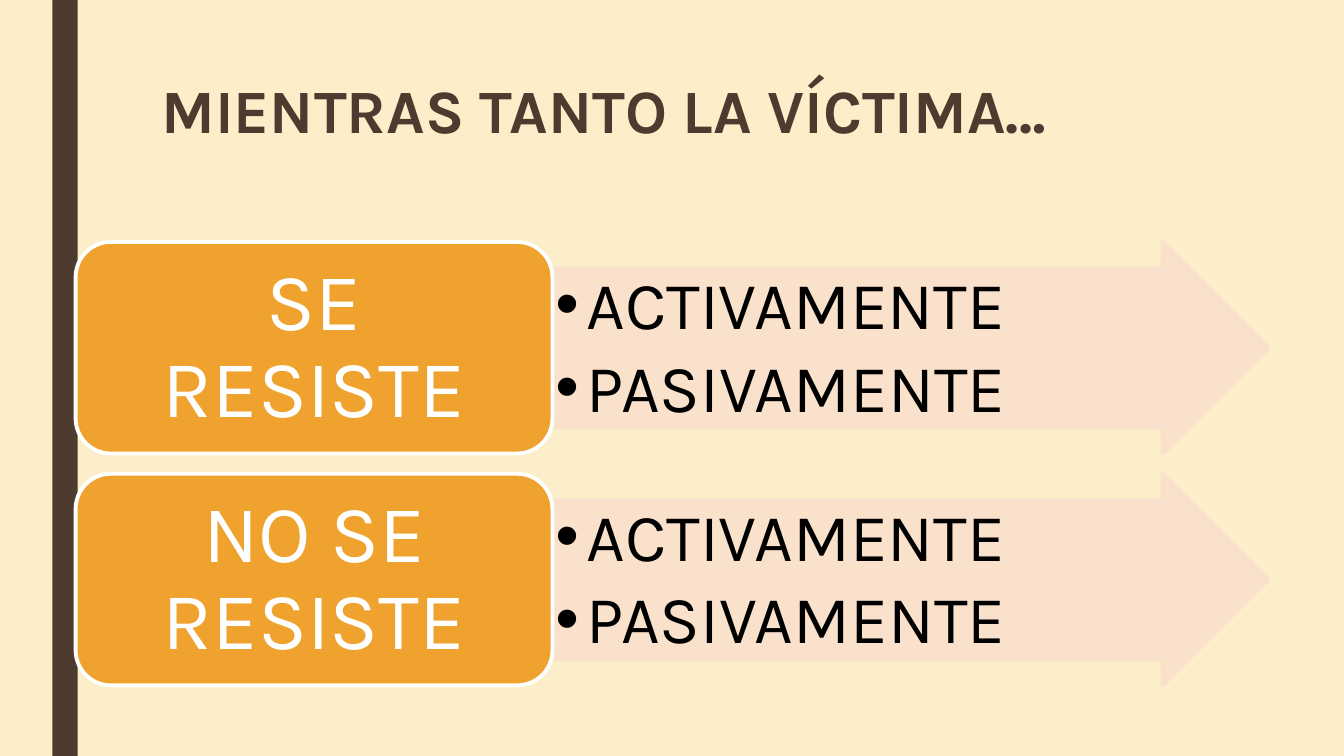
"""Builds the slide on how the victim resists or does not resist."""
from lxml import etree
from pptx import Presentation
from pptx import util as u
from pptx.dml.color import RGBColor
from pptx.enum import shapes, text
from pptx.oxml.ns import qn

TITLE = "MIENTRAS TANTO LA VÍCTIMA…"
ROWS = [
    ("SE RESISTE", ["ACTIVAMENTE", "PASIVAMENTE"]),
    ("NO SE RESISTE", ["ACTIVAMENTE", "PASIVAMENTE"]),
]
COLORS = {
    "background": "FBEEC9",
    "brown": "4E3B30",
    "orange": "F0A22E",
    "arrow": "F9E0CD",
    "white": "FFFFFF",
    "black": "000000",
}
FONT = "Karla"
LEFT, TOP, ROW_HEIGHT, ROW_STEP = 0.75, 2.4, 2.1, 2.3
LABEL_WIDTH, ARROW_WIDTH = 4.73, 7.1
BULLET_INDENT = 0.31


def color(name):
    return RGBColor.from_string(COLORS[name])


def add_block(page, kind, place, fill, line=None):
    block = page.shapes.add_shape(kind, *map(u.Inches, place))
    block.shadow.inherit = False
    block.fill.solid()
    block.fill.fore_color.rgb = color(fill)
    if line:
        block.line.color.rgb = color(line)
        block.line.width = u.Pt(2.75)
    else:
        block.line.fill.background()
    return block


def set_frame(shape, anchor, across, down):
    frame = shape.text_frame
    frame.word_wrap = True
    frame.auto_size = text.MSO_AUTO_SIZE.NONE
    frame.vertical_anchor = anchor
    frame.margin_left = frame.margin_right = u.Inches(across)
    frame.margin_top = frame.margin_bottom = u.Inches(down)
    return frame


def write(para, words, size, ink, align, bold=False):
    para.alignment = align
    para.line_spacing = 0.9
    span = para.add_run()
    span.text = words
    span.font.name = FONT
    span.font.size = u.Pt(size)
    span.font.bold = bold
    span.font.color.rgb = color(ink)


def add_bullet(para):
    props = para._p.get_or_add_pPr()
    props.set("marL", str(u.Inches(BULLET_INDENT)))
    props.set("indent", str(-u.Inches(BULLET_INDENT)))
    etree.SubElement(props, qn("a:buFont")).set("typeface", "Arial")
    etree.SubElement(props, qn("a:buChar")).set("char", "•")


def add_arrow(page, place, items):
    arrow = add_block(page, shapes.MSO_SHAPE.RIGHT_ARROW, place, "arrow", "arrow")
    arrow.adjustments[0] = 0.75
    arrow.adjustments[1] = 0.5
    for tint in arrow._element.spPr.iter(qn("a:srgbClr")):
        etree.SubElement(tint, qn("a:alpha")).set("val", "90000")
    frame = set_frame(arrow, text.MSO_ANCHOR.TOP, 0.03, 0.03)
    for index, item in enumerate(items):
        para = frame.add_paragraph() if index else frame.paragraphs[0]
        write(para, item, 48, "black", text.PP_ALIGN.LEFT)
        para.space_after = u.Pt(7.2)
        add_bullet(para)


def add_label(page, place, words):
    label = add_block(page, shapes.MSO_SHAPE.ROUNDED_RECTANGLE, place, "orange", "white")
    frame = set_frame(label, text.MSO_ANCHOR.MIDDLE, 0.24, 0.12)
    write(frame.paragraphs[0], words, 58, "white", text.PP_ALIGN.CENTER)


def main():
    deck = Presentation()
    deck.slide_width, deck.slide_height = u.Inches(13.33), u.Inches(7.5)
    page = deck.slides.add_slide(deck.slide_layouts[5])
    page.background.fill.solid()
    page.background.fill.fore_color.rgb = color("background")
    add_block(page, shapes.MSO_SHAPE.RECTANGLE, (0.52, 0, 0.25, 7.5), "brown")

    title = page.shapes.title
    title.left, title.top = u.Inches(1.5), u.Inches(0.75)
    title.width, title.height = u.Inches(10.5), u.Inches(1.62)
    frame = set_frame(title, text.MSO_ANCHOR.TOP, 0.1, 0.05)
    write(frame.paragraphs[0], TITLE, 44, "brown", text.PP_ALIGN.LEFT, bold=True)

    for index, (words, items) in enumerate(ROWS):
        top = TOP + index * ROW_STEP
        add_arrow(page, (LEFT + LABEL_WIDTH, top, ARROW_WIDTH, ROW_HEIGHT), items)
        add_label(page, (LEFT, top, LABEL_WIDTH, ROW_HEIGHT), words)

    deck.save("out.pptx")


if __name__ == "__main__":
    main()
